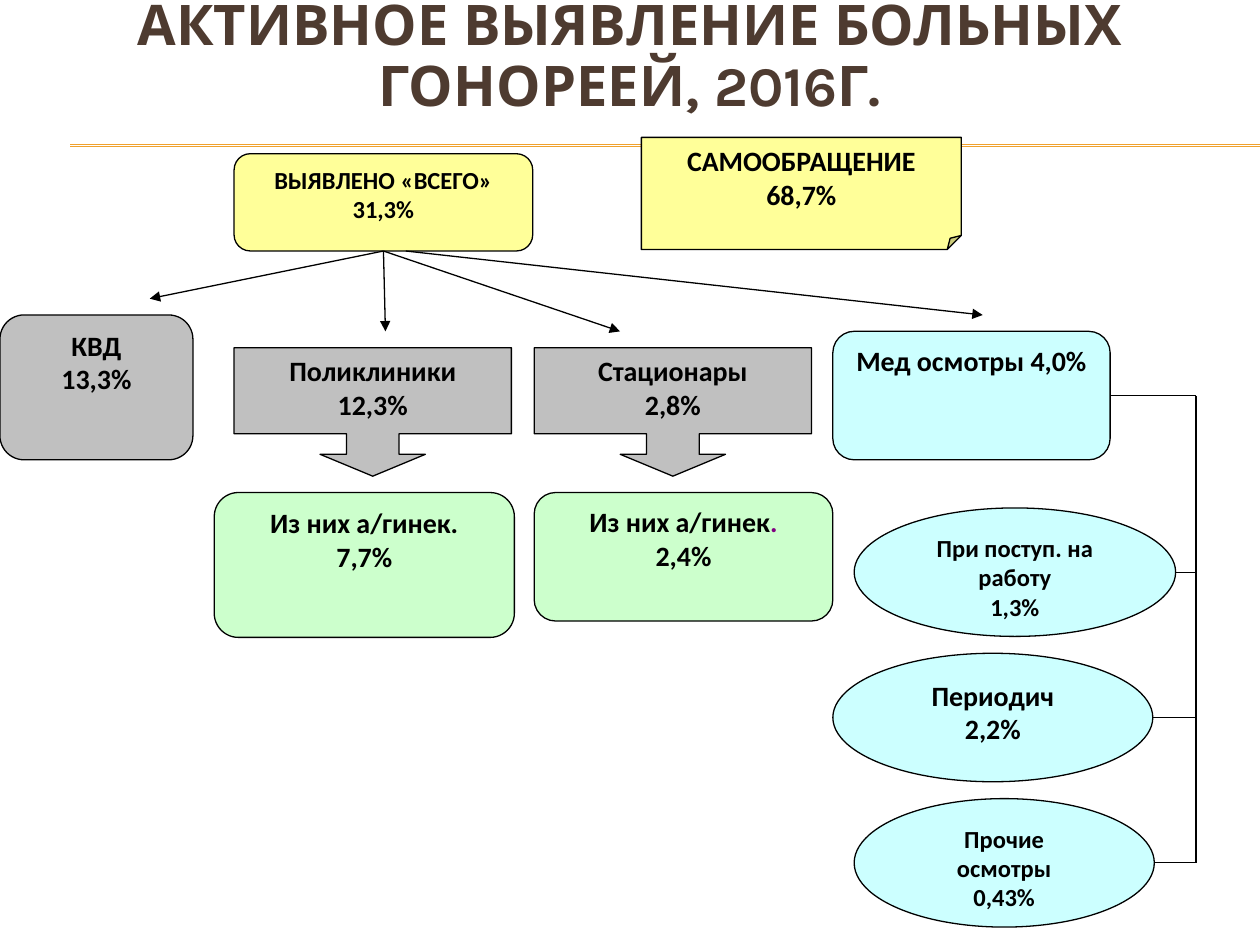
import pptx
import pptx.dml.color
import pptx.enum.shapes
import pptx.enum.text
import pptx.oxml
import pptx.oxml.ns
import pptx.util

Cm = pptx.util.Cm
Pt = pptx.util.Pt
KIND = pptx.enum.shapes.MSO_SHAPE
TEXT = pptx.enum.text
HEX = {
    "title": "4E3B30", "rule": "F0A22E", "ink": "000000", "dot": "800080",
    "yellow": "FFFF99", "grey": "C0C0C0", "green": "CCFFCC", "cyan": "CCFFFF",
}


def rgb(name):
    return pptx.dml.color.RGBColor.from_string(HEX[name])


def element(tag, attrs=""):
    space = pptx.oxml.ns.nsdecls("a")
    return pptx.oxml.parse_xml(f"<a:{tag} {space} {attrs}/>")


def write(par, runs, size, face="Calibri"):
    """Fill a centred bold paragraph with (text, colour) runs."""
    par.alignment = TEXT.PP_ALIGN.CENTER
    for text, color in runs:
        run = par.add_run()
        run.text = text
        run.font.name = face
        run.font.size = Pt(size)
        run.font.bold = True
        run.font.color.rgb = rgb(color)


def adjust(shape, guides):
    """Set preset guides by name, including ones python-pptx does not list."""
    values = shape._element.spPr.find(".//" + pptx.oxml.ns.qn("a:avLst"))
    for old in list(values):
        values.remove(old)
    for name, part in guides.items():
        values.append(element(
            "gd", f'name="{name}" fmla="val {round(part * 100000)}"'))


def node(slide, kind, box, fill, lines, size=16, guides=None):
    """Draw a filled shape; a line of text is a string or a list of runs."""
    shape = slide.shapes.add_shape(kind, *map(Cm, box))
    shape.shadow.inherit = False
    shape.fill.solid()
    shape.fill.fore_color.rgb = rgb(fill)
    shape.line.color.rgb = rgb("ink")
    shape.line.width = Pt(0.75)
    if guides:
        adjust(shape, guides)
    frame = shape.text_frame
    frame.word_wrap = True
    frame.vertical_anchor = TEXT.MSO_ANCHOR.TOP
    for i, line in enumerate(lines):
        par = frame.add_paragraph() if i else frame.paragraphs[0]
        write(par, [(line, "ink")] if isinstance(line, str) else line, size)
    return shape


def link(slide, start, end, color="ink", arrow=False):
    line = slide.shapes.add_connector(
        pptx.enum.shapes.MSO_CONNECTOR.STRAIGHT, *map(Cm, (*start, *end)))
    line.line.color.rgb = rgb(color)
    line.line.width = Pt(0.75)
    props = line._element.spPr
    if arrow:
        props.find(pptx.oxml.ns.qn("a:ln")).append(
            element("tailEnd", 'type="triangle"'))
    props.append(element("effectLst"))
    return line


def header(slide, box):
    x, y, w, h = box
    for top in (y + h - 0.05, y + h - 0.02):
        link(slide, (x + 1.42, top), (x + w, top), "rule")
    title = slide.shapes.title
    title.left, title.top, title.width, title.height = map(Cm, box)
    frame = title.text_frame
    frame.word_wrap = True
    frame.auto_size = TEXT.MSO_AUTO_SIZE.NONE
    frame.vertical_anchor = TEXT.MSO_ANCHOR.MIDDLE
    par = frame.paragraphs[0]
    par.line_spacing = 0.9
    write(par, [("АКТИВНОЕ ВЫЯВЛЕНИЕ БОЛЬНЫХ ГОНОРЕЕЙ, 2016Г.", "title")],
          32, "Karla")


def totals(slide, box):
    """Both top figures and the arrows that fan out below them."""
    x, y, w, h = box
    total = node(slide, KIND.ROUNDED_RECTANGLE, (x, y + 0.33, 6.02, 1.96),
                 "yellow", ["ВЫЯВЛЕНО «ВСЕГО»", "31,3%"], 14)
    node(slide, KIND.FOLDED_CORNER, (x + w - 6.45, y, 6.45, h), "yellow",
         ["САМООБРАЩЕНИЕ", "68,7%"], guides={"adj": 0.125})
    root = (x + 3.01, y + 2.29)
    for dx, dy in ((-1.7, 3.25), (3.05, 3.91), (7.78, 3.91)):
        arrow = link(slide, root, (x + dx, y + dy), arrow=True)
        arrow.begin_connect(total, 2)
    link(slide, (x + 3.46, y + 2.29), (x + 15.09, y + 3.58), arrow=True)


def clinics(slide, box):
    x, y, w, h = box
    node(slide, KIND.ROUNDED_RECTANGLE, (x, y, 3.89, 2.92), "grey",
         ["КВД", "13,3%"])
    guides = {"adj1": 0.41, "adj2": 0.41, "adj3": 0.17, "adj4": 0.67}
    # callout name and share, its left; green box left, width, height, runs
    cols = (
        ("Поликлиники", "12,3%", 4.72, 4.32, 6.05, 2.92,
         [("Из них а/гинек.", "ink")], "7,7%"),
        ("Стационары", "2,8%", 10.77, 10.77, 6.02, 2.59,
         [("Из них а/гинек", "ink"), (".", "dot")], "2,4%"),
    )
    for name, share, dx, left, wide, high, runs, part in cols:
        node(slide, KIND.DOWN_ARROW_CALLOUT, (x + dx, y + 0.66, 5.59, 2.59),
             "grey", [name, share], guides=guides)
        node(slide, KIND.ROUNDED_RECTANGLE, (x + left, y + 3.58, wide, high),
             "green", [runs, part])


def exams(slide, box):
    """Medical exams with three kinds hung on a trunk at the right edge."""
    x, y, w, h = box
    high, step = 2.59, 2.93
    trunk, mid = x + w, y + high / 2
    main = node(slide, KIND.ROUNDED_RECTANGLE, (x, y, 5.59, high), "cyan",
                ["Мед осмотры 4,0%"])
    link(slide, (x + 5.59, mid), (trunk, mid)).begin_connect(main, 3)
    link(slide, (trunk, mid), (trunk, y + h - high / 2))
    kinds = (
        (0.43, 6.48, 14, ["При поступ. на работу", "1,3%"]),
        (0, 6.45, 16, ["Периодич", "2,2%"]),
        (0.43, 6.05, 14, ["Прочие", "осмотры", "0,43%"]),
    )
    first = y + h - high - 2 * step
    for i, (dx, wide, size, lines) in enumerate(kinds):
        top = first + i * step
        node(slide, KIND.OVAL, (x + dx, top, wide, high), "cyan", lines, size)
        link(slide, (x + dx + wide, top + high / 2), (trunk, top + high / 2))


def main():
    deck = pptx.Presentation()
    deck.slide_width, deck.slide_height = Cm(25.4), Cm(19.05)
    slide = deck.slides.add_slide(deck.slide_layouts[5])
    header(slide, (0, -0.64, 25.4, 3.61))
    totals(slide, (4.72, 2.77, 14.66, 2.26))
    clinics(slide, (0, 6.35, 16.79, 6.5))
    exams(slide, (16.79, 6.68, 7.32, 12.01))
    deck.save("out.pptx")


if __name__ == "__main__":
    main()
